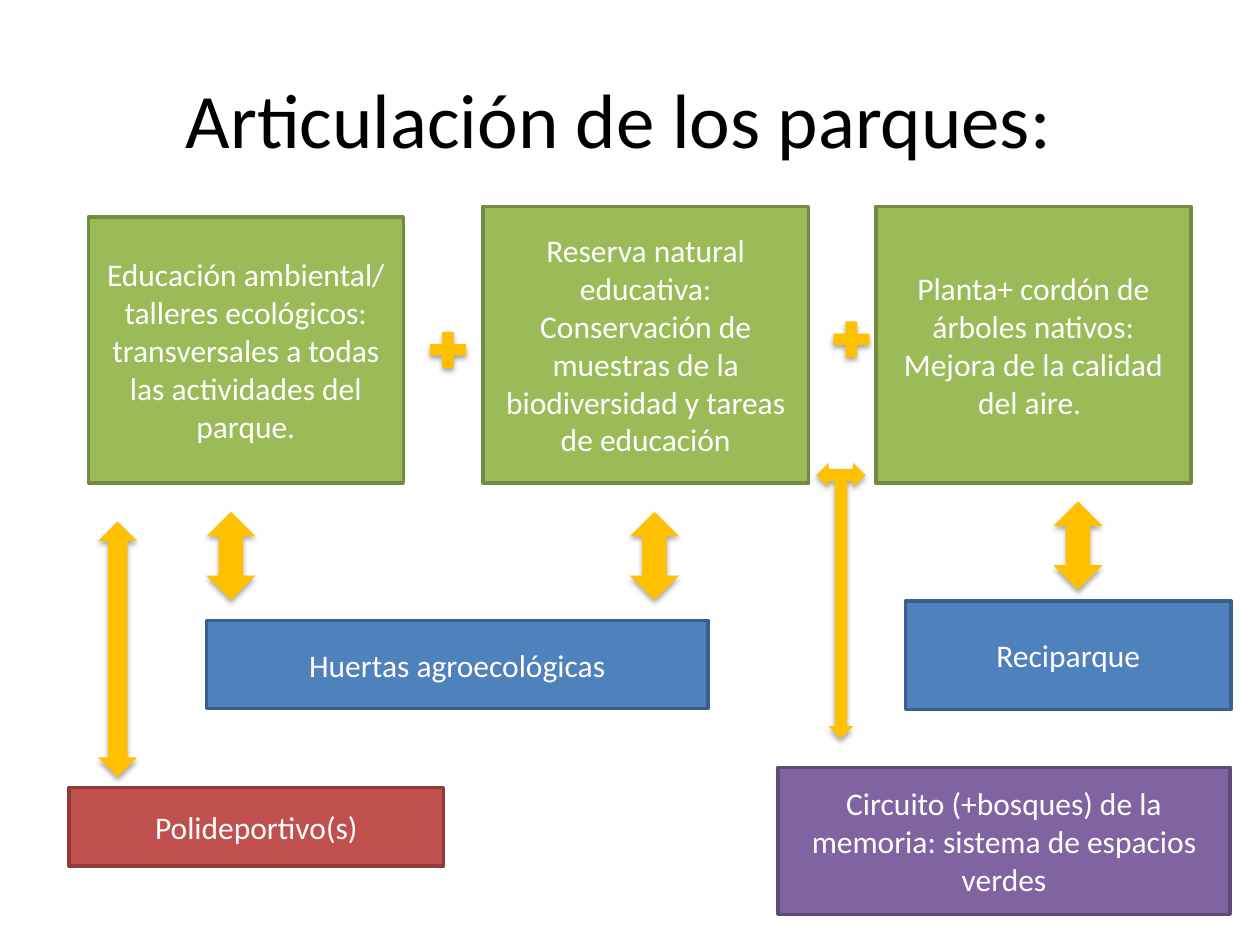
from dataclasses import dataclass

from lxml.etree import SubElement
from pptx import Presentation
from pptx.dml.color import RGBColor
from pptx.enum.shapes import MSO_SHAPE
from pptx.enum.text import MSO_ANCHOR, PP_ALIGN
from pptx.oxml.ns import qn
from pptx.util import Pt


@dataclass(frozen=True)
class Tone:
    fill: str
    line: str


@dataclass(frozen=True)
class Theme:
    font: str = "Calibri"
    title_size: float = 44
    body_size: float = 18
    outline: float = 2
    title_color: str = "000000"
    box_text: str = "FFFFFF"
    link: str = "FFC000"
    shadow: str = "000000"
    green: Tone = Tone("9BBB59", "738A42")
    blue: Tone = Tone("4F81BD", "3A5F8C")
    red: Tone = Tone("C0504D", "8E3B39")
    purple: Tone = Tone("8064A2", "5F4A78")


THEME = Theme()


@dataclass(frozen=True)
class Area:
    left: float
    top: float
    width: float
    height: float

    def lengths(self):
        return [Pt(v) for v in (self.left, self.top, self.width, self.height)]


@dataclass(frozen=True)
class Box:
    text: str
    area: Area
    tone: Tone


@dataclass(frozen=True)
class Link:
    kind: MSO_SHAPE
    area: Area
    rotation: float = 0


PARK_BOTTOM = 276
PLUS_SIZE = 28
LINK_WIDTH, LINK_HEIGHT = 28, 50.5
LINK_LEFT, LINK_STEP = 118, 242

BOXES = [
    Box("Educación ambiental/ talleres ecológicos: transversales a todas "
        "las actividades del parque.",
        Area(50.5, 124, 180, PARK_BOTTOM - 124), THEME.green),
    Box("Reserva natural educativa: Conservación de muestras de la "
        "biodiversidad y tareas de educación",
        Area(276, 118, 186, PARK_BOTTOM - 118), THEME.green),
    Box("Planta+ cordón de árboles nativos: Mejora de la calidad del aire. ",
        Area(500.5, 118, 180, PARK_BOTTOM - 118), THEME.green),
    Box("Reciparque", Area(517.5, 343.5, 186, 62), THEME.blue),
    Box("Huertas agroecológicas", Area(118, 354.5, 286.5, 50.5), THEME.blue),
    Box("Polideportivo(s)", Area(39.5, 450, 214, 45), THEME.red),
    Box("Circuito (+bosques) de la memoria: sistema de espacios verdes",
        Area(444.5, 438.5, 258.5, 84), THEME.purple),
]

LINKS = [
    *(Link(MSO_SHAPE.UP_DOWN_ARROW,
           Area(LINK_LEFT + i * LINK_STEP, top, LINK_WIDTH, LINK_HEIGHT))
      for i, top in enumerate((292.5, 292.5, 286.5))),
    Link(MSO_SHAPE.UP_DOWN_ARROW, Area(56, 298, 22.5, 146)),
    Link(MSO_SHAPE.LEFT_RIGHT_UP_ARROW, Area(466.5, 264.5, 28, 157.5), 180),
    *(Link(MSO_SHAPE.MATH_PLUS, Area(left, top, PLUS_SIZE, PLUS_SIZE))
      for left, top in ((242, 186), (472.5, 180))),
]


def write_text(shape, text: str, *, size: float, color: str) -> None:
    frame = shape.text_frame
    frame.word_wrap = True
    frame.vertical_anchor = MSO_ANCHOR.MIDDLE
    paragraph = frame.paragraphs[0]
    paragraph.alignment = PP_ALIGN.CENTER
    run = paragraph.add_run()
    run.text = text
    run.font.name = THEME.font
    run.font.size = Pt(size)
    run.font.color.rgb = RGBColor.from_string(color)


def add_filled(slide, kind: MSO_SHAPE, area: Area, fill: str):
    shape = slide.shapes.add_shape(kind, *area.lengths())
    shape.shadow.inherit = False
    shape.fill.solid()
    shape.fill.fore_color.rgb = RGBColor.from_string(fill)
    return shape


def add_drop_shadow(shape) -> None:
    """Put a soft shadow, 35 % opaque, straight below the shape."""
    effects = shape.element.spPr.find(qn("a:effectLst"))
    shadow = SubElement(effects, qn("a:outerShdw"), blurRad=str(Pt(3.1)),
                        dist=str(Pt(1.8)), dir="5400000", rotWithShape="0")
    color = SubElement(shadow, qn("a:srgbClr"), val=THEME.shadow)
    SubElement(color, qn("a:alpha"), val="35000")


def draw_box(slide, box: Box) -> None:
    shape = add_filled(slide, MSO_SHAPE.RECTANGLE, box.area, box.tone.fill)
    shape.line.color.rgb = RGBColor.from_string(box.tone.line)
    shape.line.width = Pt(THEME.outline)
    write_text(shape, box.text, size=THEME.body_size, color=THEME.box_text)


def draw_link(slide, link: Link) -> None:
    shape = add_filled(slide, link.kind, link.area, THEME.link)
    shape.line.fill.background()
    shape.rotation = link.rotation
    add_drop_shadow(shape)


def main() -> None:
    deck = Presentation()
    deck.slide_width, deck.slide_height = Pt(720), Pt(540)
    slide = deck.slides.add_slide(deck.slide_layouts[5])

    heading = slide.shapes.title
    heading.left, heading.top, heading.width, heading.height = Area(
        22.5, 22.5, 652.5, 90).lengths()
    write_text(heading, " Articulación de los parques:",
               size=THEME.title_size, color=THEME.title_color)

    for box in BOXES:
        draw_box(slide, box)
    for link in LINKS:
        draw_link(slide, link)
    deck.save("out.pptx")


if __name__ == "__main__":
    main()
